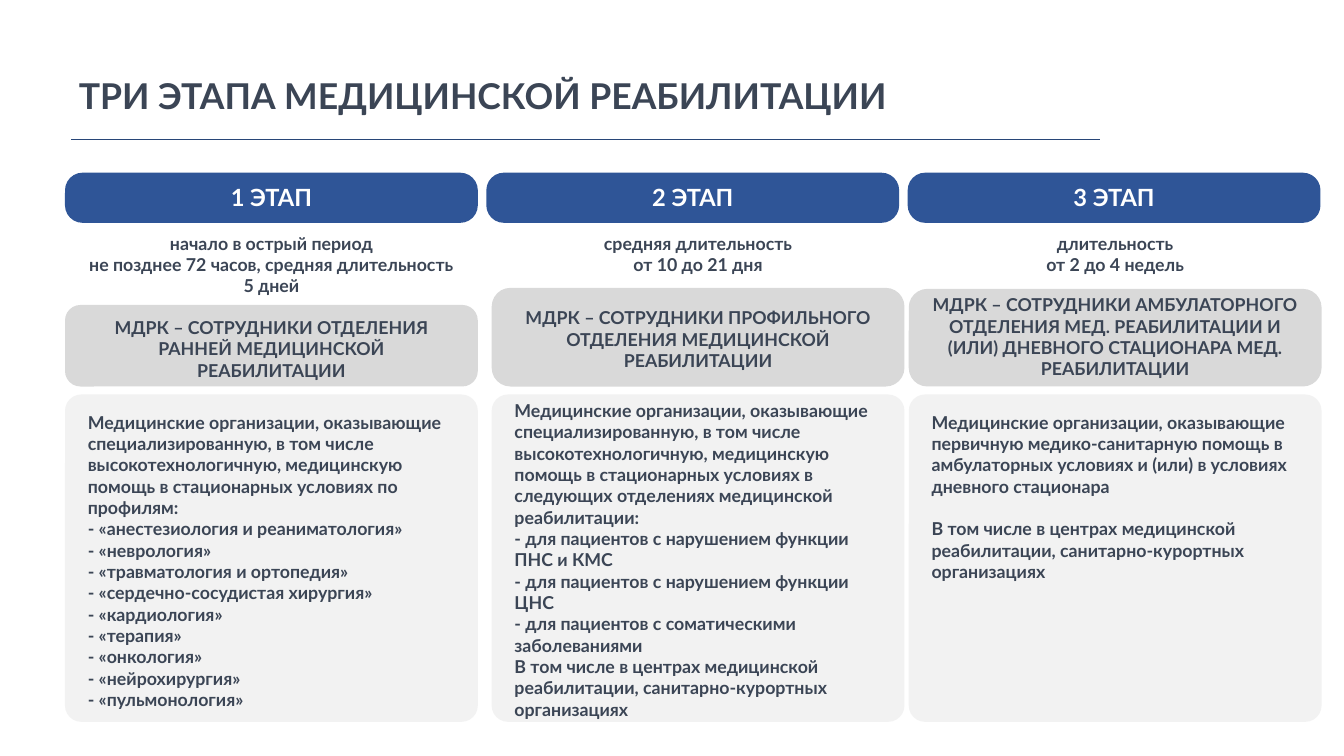
from lxml.etree import SubElement
from pptx import Presentation
from pptx.dml.color import RGBColor
from pptx.enum.shapes import MSO_CONNECTOR as Connector, MSO_SHAPE as Shape
from pptx.enum.text import MSO_AUTO_SIZE as AutoSize, PP_ALIGN as Align
from pptx.oxml.ns import qn
from pptx.util import Inches, Pt

COLUMNS, ROWS = 126, 70.9
CARD_WIDTH, TEXT_WIDTH, TEXT_INSET = 38.7, 36.4, 1.15
HEAD_LEFT, HEAD_PITCH = 6.1, 39.5
ROLE_BOTTOM = 36.25
CENTERS = "В том числе в центрах медицинской реабилитации, санитарно-курортных организациях"

STAGES = [
    dict(
        left=6.1, role_top=28.6, role_text=(29.2, 7.1), body_text=(38.1, 29.3), term_height=7.1,
        term=["начало в острый период", "не позднее 72 часов, средняя длительность 5 дней"],
        role="МДРК – СОТРУДНИКИ ОТДЕЛЕНИЯ РАННЕЙ МЕДИЦИНСКОЙ РЕАБИЛИТАЦИИ",
        body=[
            "Медицинские организации, оказывающие специализированную, в том числе "
            "высокотехнологичную, медицинскую помощь в стационарных условиях по профилям:",
            "- «анестезиология и реаниматология»",
            "- «неврология»",
            "- «травматология и ортопедия»",
            "- «сердечно-сосудистая хирургия»",
            "- «кардиология»",
            "- «терапия»",
            "- «онкология»",
            "- «нейрохирургия»",
            "- «пульмонология»",
        ],
    ),
    dict(
        left=46.1, role_top=27, role_text=(28.3, 7.1), body_text=(37, 31.3), term_height=5,
        term=["средняя длительность", "от 10 до 21 дня"],
        role="МДРК – СОТРУДНИКИ ПРОФИЛЬНОГО ОТДЕЛЕНИЯ МЕДИЦИНСКОЙ РЕАБИЛИТАЦИИ",
        body=[
            "Медицинские организации, оказывающие специализированную, в том числе "
            "высокотехнологичную, медицинскую помощь в стационарных условиях в следующих "
            "отделениях медицинской реабилитации:",
            "- для пациентов с нарушением функции ПНС и КМС",
            "- для пациентов с нарушением функции ЦНС",
            "- для пациентов с соматическими заболеваниями",
            CENTERS,
        ],
    ),
    dict(
        left=85.2, role_top=27.1, role_text=(27.1, 9.1), body_text=(38.1, 19.2), term_height=5,
        term=["длительность", "от 2 до 4 недель"],
        role="МДРК – СОТРУДНИКИ АМБУЛАТОРНОГО ОТДЕЛЕНИЯ МЕД. РЕАБИЛИТАЦИИ И (ИЛИ) "
             "ДНЕВНОГО СТАЦИОНАРА МЕД. РЕАБИЛИТАЦИИ",
        body=[
            "Медицинские организации, оказывающие первичную медико-санитарную помощь "
            "в амбулаторных условиях и (или) в условиях дневного стационара",
            CENTERS,
        ],
        last_gap=14.4,
    ),
]


def color(value):
    return RGBColor.from_string(value)


def grid(*cells):
    return [Inches(round(cell / 10, 3)) for cell in cells]


def write(frame, lines, size=12, fill="3B4555", align=Align.LEFT, last_gap=0):
    for index, line in enumerate(lines):
        para = frame.add_paragraph() if index else frame.paragraphs[0]
        para.alignment = align
        span = para.add_run()
        span.text = line
        span.font.name, span.font.size, span.font.bold = "Lato", Pt(size), True
        span.font.color.rgb = color(fill)
    if last_gap:
        para.space_before = Pt(last_gap)


class StageSlide:
    """Draw the slide's elements on a grid of tenths of an inch."""

    def __init__(self, deck):
        deck.slide_width, deck.slide_height = grid(COLUMNS, ROWS)
        self.page = deck.slides.add_slide(deck.slide_layouts[6])

    def rule(self, left, right, row):
        line = self.page.shapes.add_connector(Connector.STRAIGHT, *grid(left, row, right, row))
        line.line.color.rgb = color("284678")
        line.line.width = Pt(1)
        SubElement(line._element.spPr, qn("a:effectLst"))

    def card(self, left, top, height, fill, rounding):
        box = self.page.shapes.add_shape(
            Shape.ROUNDED_RECTANGLE, *grid(left, top, CARD_WIDTH, height))
        box.adjustments[0] = rounding
        box.shadow.inherit = False
        box.fill.solid()
        box.fill.fore_color.rgb = color(fill)
        box.line.fill.background()

    def text(self, lines, left, top, width, height, **style):
        frame = self.page.shapes.add_textbox(*grid(left, top, width, height)).text_frame
        frame.word_wrap = True
        frame.auto_size = AutoSize.SHAPE_TO_FIT_TEXT
        write(frame, lines, **style)

    def stage(self, index, data):
        head = HEAD_LEFT + HEAD_PITCH * index
        self.card(head, 16.2, 4.7, "2F5597", 0.35)
        self.text([f"{index + 1} ЭТАП"], head, 16.7, CARD_WIDTH, 3.7,
                  size=16, fill="FFFFFF", align=Align.CENTER)
        left, role_top = data["left"], data["role_top"]
        self.card(left, 37, 30.7, "F2F2F2", 0.05)
        self.card(left, role_top, ROLE_BOTTOM - role_top, "D9D9D9", 0.19)
        text_left = left + TEXT_INSET
        for lines, (top, height), style in (
            (data["body"], data["body_text"], dict(last_gap=data.get("last_gap", 0))),
            ([data["role"]], data["role_text"], dict(align=Align.CENTER)),
            (data["term"], (21.3, data["term_height"]), dict(align=Align.CENTER)),
        ):
            self.text(lines, text_left, top, TEXT_WIDTH, height, **style)


def main():
    deck = Presentation()
    slide = StageSlide(deck)
    slide.rule(6.7, 103.1, 13.1)
    slide.text(["ТРИ ЭТАПА МЕДИЦИНСКОЙ РЕАБИЛИТАЦИИ"], 6.4, 6.4, 114.9, 5, size=24)
    for index, data in enumerate(STAGES):
        slide.stage(index, data)
    deck.save("out.pptx")


if __name__ == "__main__":
    main()
